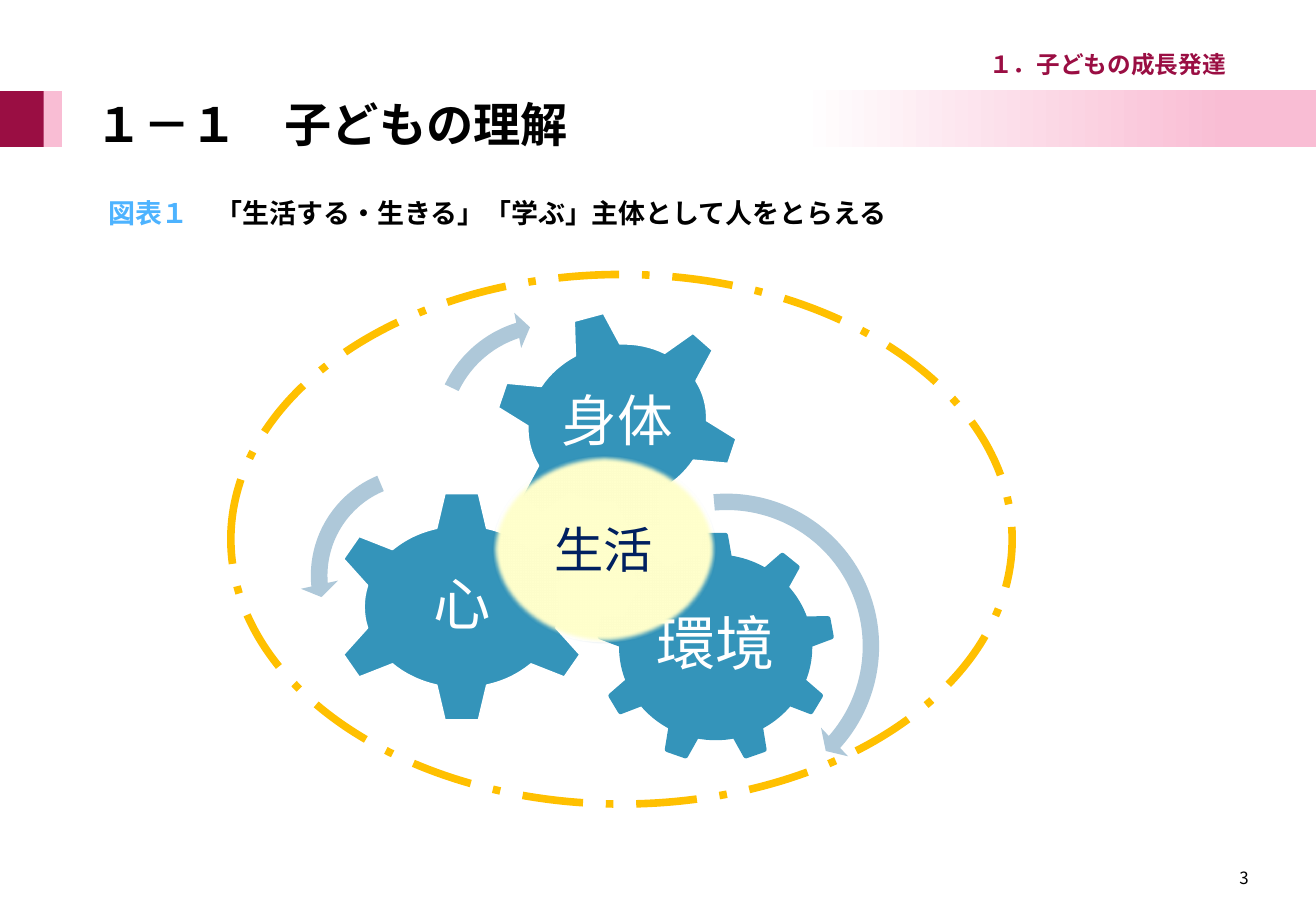
"""Build the slide on understanding children with three interlocking gears."""
from typing import NamedTuple

from lxml.etree import SubElement
from pptx import Presentation
from pptx.dml.color import RGBColor
from pptx.enum.dml import MSO_LINE
from pptx.enum.shapes import MSO_SHAPE
from pptx.enum.text import MSO_ANCHOR, PP_ALIGN
from pptx.oxml.ns import qn
from pptx.shapes.autoshape import Shape
from pptx.slide import Slide
from pptx.util import Emu, Pt

PX = 9144
FONT = "Noto Sans CJK JP"
WHITE = RGBColor(0xFF, 0xFF, 0xFF)
BLACK = RGBColor(0x00, 0x00, 0x00)
CRIMSON = RGBColor(0x9A, 0x0E, 0x43)
PINK = RGBColor(0xF9, 0xBD, 0xD4)
TEAL = RGBColor(0x34, 0x94, 0xBA)
DARK_TEAL = RGBColor(0x26, 0x6D, 0x8A)
PALE_BLUE = RGBColor(0xAE, 0xC8, 0xD9)
GOLD = RGBColor(0xFF, 0xC0, 0x00)
CREAM = RGBColor(0xFF, 0xFF, 0xCC)
NAVY = RGBColor(0x00, 0x20, 0x60)
SKY = RGBColor(0x4D, 0xB3, 0xFF)


class Box(NamedTuple):
    """Left, top, width and height in px."""
    x: int
    y: int
    w: int
    h: int

    def emu(self) -> list[Emu]:
        """Return the four lengths in EMU."""
        return [Emu(v * PX) for v in self]


class Gear(NamedTuple):
    """A gear and the label on it."""
    kind: MSO_SHAPE
    box: Box
    rotation: float
    line: RGBColor
    line_pt: float
    label: str
    label_box: Box
    size: float


class Arrow(NamedTuple):
    """A curved arrow showing which way a gear turns."""
    kind: MSO_SHAPE
    box: Box
    rotation: float
    adjustments: tuple[float, ...]


GEARS = [
    Gear(MSO_SHAPE.GEAR_9, Box(493, 440, 192, 186), 0, TEAL, 3,
         "環境", Box(531, 484, 116, 96), 35),
    Gear(MSO_SHAPE.GEAR_6, Box(271, 404, 218, 191), 0, WHITE, 1,
         "心", Box(323, 453, 114, 94), 34),
    Gear(MSO_SHAPE.GEAR_6, Box(406, 256, 204, 185), 345, WHITE, 1,
         "身体", Box(452, 296, 112, 106), 33),
]
ARROWS = [
    Arrow(MSO_SHAPE.CIRCULAR_ARROW, Box(463, 397, 270, 270), 0,
          (0.05, 2.99, 24.97, 159.03, 0.06)),
    Arrow(MSO_SHAPE.LEFT_CIRCULAR_ARROW, Box(247, 376, 196, 196), 0,
          (0.07, 4.3, 104.89, 148.38, 0.08)),
    Arrow(MSO_SHAPE.CIRCULAR_ARROW, Box(348, 253, 211, 211), 30.5,
          (0.06, 3.94, 133.14, 105.08, 0.07)),
]


def add_shape(s: Slide, kind: MSO_SHAPE, box: Box, *, fill: RGBColor | None = None,
              line: RGBColor | None = None, line_pt: float = 1,
              rotation: float = 0) -> Shape:
    """Add a preset shape without shadow."""
    sp = s.shapes.add_shape(kind, *box.emu())
    sp.shadow.inherit = False
    sp.rotation = rotation
    if fill is None:
        sp.fill.background()
    else:
        sp.fill.solid()
        sp.fill.fore_color.rgb = fill
    if line is None:
        sp.line.fill.background()
    else:
        sp.line.color.rgb = line
        sp.line.width = Pt(line_pt)
    return sp


def write(sp: Shape, *runs: tuple[str, RGBColor], size: float, bold: bool = False,
          align: PP_ALIGN = PP_ALIGN.LEFT, anchor: MSO_ANCHOR = MSO_ANCHOR.TOP,
          insets: tuple[int, int, int, int] = (10, 5, 10, 5),
          spacing: float = 1.0, wrap: bool = True) -> None:
    """Write one paragraph of coloured runs into a shape."""
    tf = sp.text_frame
    tf.word_wrap = wrap
    tf.vertical_anchor = anchor
    tf.margin_left, tf.margin_top, tf.margin_right, tf.margin_bottom = (
        Emu(v * PX) for v in insets)
    p = tf.paragraphs[0]
    p.alignment = align
    p.line_spacing = spacing
    for text, color in runs:
        r = p.add_run()
        r.text = text
        r.font.size = Pt(size)
        r.font.bold = bold
        r.font.color.rgb = color
        r.font.name = FONT
        SubElement(r.font._element, qn("a:ea")).set("typeface", FONT)


def add_text(s: Slide, box: Box, *runs: tuple[str, RGBColor], **fmt) -> None:
    """Add a text box holding the given runs."""
    write(s.shapes.add_textbox(*box.emu()), *runs, **fmt)


def add_header(s: Slide) -> None:
    """Draw the title band with section name and title."""
    add_shape(s, MSO_SHAPE.RECTANGLE, Box(0, 75, 38, 46), fill=CRIMSON)
    add_shape(s, MSO_SHAPE.RECTANGLE, Box(36, 75, 15, 46), fill=PINK)
    band = add_shape(s, MSO_SHAPE.RECTANGLE, Box(658, 74, 425, 47))
    band.fill.gradient()
    band.fill.gradient_angle = 0
    for stop, position, color in zip(band.fill.gradient_stops, (0, 0.83), (WHITE, PINK)):
        stop.position = position
        stop.color.rgb = color
    add_text(s, Box(658, 18, 351, 47), ("１．子どもの成長発達", CRIMSON), size=14,
             bold=True, align=PP_ALIGN.RIGHT, anchor=MSO_ANCHOR.BOTTOM,
             insets=(0, 0, 0, 0), spacing=0.9)
    add_text(s, Box(79, 73, 934, 64), ("１－１　子どもの理解", BLACK), size=28,
             bold=True, anchor=MSO_ANCHOR.MIDDLE, insets=(0, 0, 0, 0), spacing=0.9)


def add_gear(s: Slide, gear: Gear) -> None:
    """Draw a gear and its label."""
    add_shape(s, gear.kind, gear.box, fill=TEAL, line=gear.line,
              line_pt=gear.line_pt, rotation=gear.rotation)
    add_text(s, gear.label_box, (gear.label, WHITE), size=gear.size,
             align=PP_ALIGN.CENTER, anchor=MSO_ANCHOR.MIDDLE,
             insets=(5, 5, 5, 5), spacing=0.9)


def add_arrow(s: Slide, arrow: Arrow) -> None:
    """Draw a curved arrow."""
    sp = add_shape(s, arrow.kind, arrow.box, fill=PALE_BLUE, rotation=arrow.rotation)
    for i, value in enumerate(arrow.adjustments):
        sp.adjustments[i] = value


def add_life(s: Slide) -> None:
    """Draw the dashed ring and the soft-edged centre."""
    ring = add_shape(s, MSO_SHAPE.OVAL, Box(190, 226, 643, 436), line=GOLD, line_pt=4.5)
    ring.line.dash_style = MSO_LINE.LONG_DASH_DOT
    life = add_shape(s, MSO_SHAPE.OVAL, Box(405, 375, 184, 154), fill=CREAM, line=DARK_TEAL)
    effects = life._element.spPr.find(qn("a:effectLst"))
    SubElement(effects, qn("a:softEdge")).set("rad", str(Pt(2.5)))
    write(life, ("生活", NAVY), size=29.2, align=PP_ALIGN.CENTER, anchor=MSO_ANCHOR.MIDDLE)


def main() -> None:
    """Build and save the slide."""
    prs = Presentation()
    prs.slide_width, prs.slide_height = Emu(1083 * PX), Emu(750 * PX)
    s = prs.slides.add_slide(prs.slide_layouts[6])
    add_header(s)
    for gear in GEARS:
        add_gear(s, gear)
    for arrow in ARROWS:
        add_arrow(s, arrow)
    add_life(s)
    add_text(s, Box(89, 157, 671, 37), ("図表１　", SKY),
             ("「生活する・生きる」「学ぶ」主体として人をとらえる", BLACK),
             size=16, bold=True, insets=(0, 5, 10, 5), wrap=False)
    add_text(s, Box(1010, 709, 29, 27), ("3", BLACK), size=10, wrap=False)
    prs.save("out.pptx")


if __name__ == "__main__":
    main()
